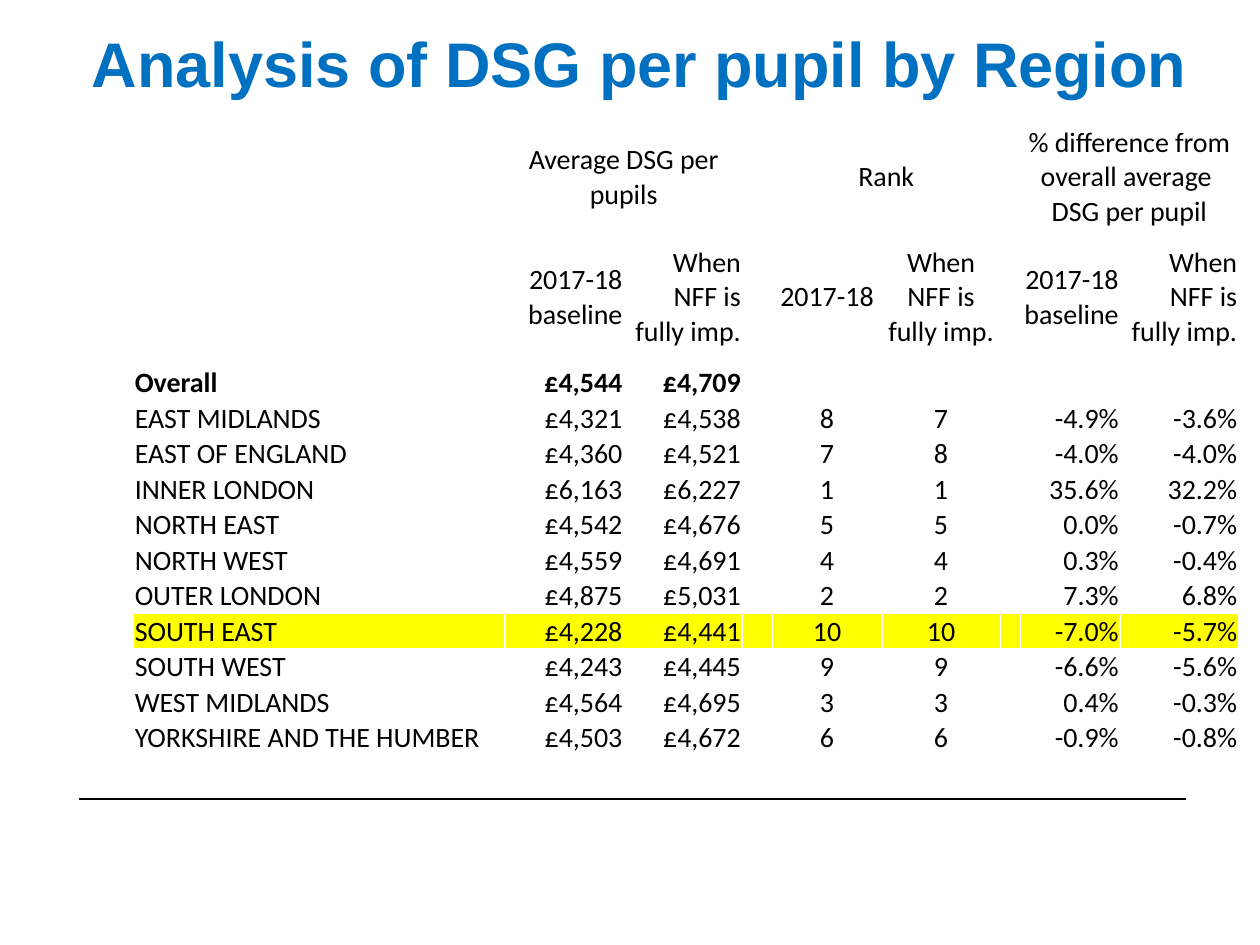
from copy import deepcopy
from dataclasses import dataclass

from lxml.etree import SubElement as Sub
from pptx import Presentation
from pptx.dml.color import RGBColor as Rgb
from pptx.enum.shapes import MSO_CONNECTOR as Conn
from pptx.enum.text import MSO_ANCHOR as Anchor, MSO_AUTO_SIZE as Fit, PP_ALIGN as Align
from pptx.oxml.ns import qn
from pptx.util import Inches, Pt


@dataclass(frozen=True)
class Theme:
    head: str = "Arial"
    body: str = "Calibri"
    big: int = 36
    small: int = 16
    blue: str = "0070C0"
    black: str = "000000"
    white: str = "FFFFFF"
    mark: str = "FFFF00"


L, C, R = Align.LEFT, Align.CENTER, Align.RIGHT
ALIGNS = [L, R, R, C, C, C, C, R, R]
COLS = [2.95, 0.94, 0.94, 0.24, 0.87, 0.94, 0.16, 0.79, 0.94]
ROWS = [0.68, 1.08] + [0.23] * 11
GAPS = (3, 6)  # narrow columns between the groups
GROUPS = {
    1: "Average DSG per pupils",
    4: "Rank",
    7: "% difference from overall average \nDSG per pupil",
}
BASE, FULL = "2017-18 baseline", "When NFF is fully imp."
HEADS = ["", BASE, FULL, "2017-18", FULL, BASE, FULL]
REGIONS = [
    ["Overall", "£4,544", "£4,709", "", "", "", ""],
    ["EAST MIDLANDS", "£4,321", "£4,538", "8", "7", "-4.9%", "-3.6%"],
    ["EAST OF ENGLAND", "£4,360", "£4,521", "7", "8", "-4.0%", "-4.0%"],
    ["INNER LONDON", "£6,163", "£6,227", "1", "1", "35.6%", "32.2%"],
    ["NORTH EAST", "£4,542", "£4,676", "5", "5", "0.0%", "-0.7%"],
    ["NORTH WEST", "£4,559", "£4,691", "4", "4", "0.3%", "-0.4%"],
    ["OUTER LONDON", "£4,875", "£5,031", "2", "2", "7.3%", "6.8%"],
    ["SOUTH EAST", "£4,228", "£4,441", "10", "10", "-7.0%", "-5.7%"],
    ["SOUTH WEST", "£4,243", "£4,445", "9", "9", "-6.6%", "-5.6%"],
    ["WEST MIDLANDS", "£4,564", "£4,695", "3", "3", "0.4%", "-0.3%"],
    ["YORKSHIRE AND THE HUMBER", "£4,503", "£4,672", "6", "6", "-0.9%", "-0.8%"],
]


def write(frame, text, font, size, color, bold=False, align=L):
    """Fill a text frame; line breaks and empty cells keep the type size too."""
    para = frame.paragraphs[0]
    para.text = text
    para.alignment = align
    for run in para.runs:
        run.font.name = font
        run.font.size = Pt(size)
        run.font.bold = bold
        run.font.color.rgb = Rgb.from_string(color)
    for gap in para._p.findall(qn("a:br")):
        gap.append(deepcopy(para.runs[0]._r.rPr))
    if not text:
        para._p.get_or_add_endParaRPr().set("sz", str(size * 100))


def spread(items):
    """Insert the empty gap columns into a row of seven values."""
    row = list(items)
    for col in GAPS:
        row.insert(col, "")
    return row


class Deck:
    def __init__(self, theme):
        self.theme = theme
        self.prs = Presentation()
        self.prs.slide_width, self.prs.slide_height = Inches(10), Inches(7.5)
        self.slide = self.prs.slides.add_slide(self.prs.slide_layouts[5])

    def title(self, text, x, y, w, h):
        box = self.slide.shapes.title
        box.left, box.top, box.width, box.height = map(Inches, (x, y, w, h))
        frame = box.text_frame
        frame.word_wrap = True
        frame.auto_size = Fit.NONE
        frame.vertical_anchor = Anchor.MIDDLE
        write(frame, text, self.theme.head, self.theme.big, self.theme.blue, bold=True)

    def line(self, x1, y1, x2, y2):
        ends = map(Inches, (x1, y1, x2, y2))
        rule = self.slide.shapes.add_connector(Conn.STRAIGHT, *ends)
        rule.line.color.rgb = Rgb.from_string(self.theme.black)
        rule.line.width = Pt(1)
        Sub(rule._element.spPr, qn("a:effectLst"))

    def table(self, x, y, cols, rows):
        size = map(Inches, (x, y, sum(cols), sum(rows)))
        grid = self.slide.shapes.add_table(len(rows), len(cols), *size).table
        grid.first_row = grid.horz_banding = False
        for col, w in zip(grid.columns, cols):
            col.width = Inches(w)
        for row, h in zip(grid.rows, rows):
            row.height = Inches(h)
        return grid

    def cell(self, cell, text, align, bold=False, fill=None, anchor=Anchor.MIDDLE):
        cell.margin_left = cell.margin_right = cell.margin_top = Inches(0.01)
        cell.margin_bottom = 0
        cell.vertical_anchor = anchor
        self.edge(cell)
        if fill:
            cell.fill.solid()
            cell.fill.fore_color.rgb = Rgb.from_string(fill)
        else:
            cell.fill.background()
        write(cell.text_frame, text, self.theme.body, self.theme.small,
              self.theme.black, bold, align)

    def edge(self, cell):
        """Draw thin white borders on all four sides."""
        props = cell._tc.get_or_add_tcPr()
        for side in ("lnL", "lnR", "lnT", "lnB"):
            line = Sub(props, qn(f"a:{side}"), w=str(Pt(1)))
            Sub(Sub(line, qn("a:solidFill")), qn("a:srgbClr"), val=self.theme.white)


def main():
    theme = Theme()
    deck = Deck(theme)
    deck.title("Analysis of DSG per pupil by Region", 0.63, 0, 9, 0.99)
    deck.line(0.63, 6.34, 9.41, 6.34)

    grid = deck.table(1.06, 0.99, COLS, ROWS)
    for c in range(len(COLS)):
        deck.cell(grid.cell(0, c), GROUPS.get(c, ""), C)
    for c in GROUPS:
        grid.cell(0, c).merge(grid.cell(0, c + 1))
    for r, items in enumerate([HEADS] + REGIONS, 1):
        total = items[0] == "Overall"
        fill = theme.mark if items[0] == "SOUTH EAST" else None
        for c, text in enumerate(spread(items)):
            anchor = Anchor.BOTTOM if total and c else Anchor.MIDDLE
            deck.cell(grid.cell(r, c), text, ALIGNS[c], total, fill, anchor)

    deck.prs.save("out.pptx")


if __name__ == "__main__":
    main()
